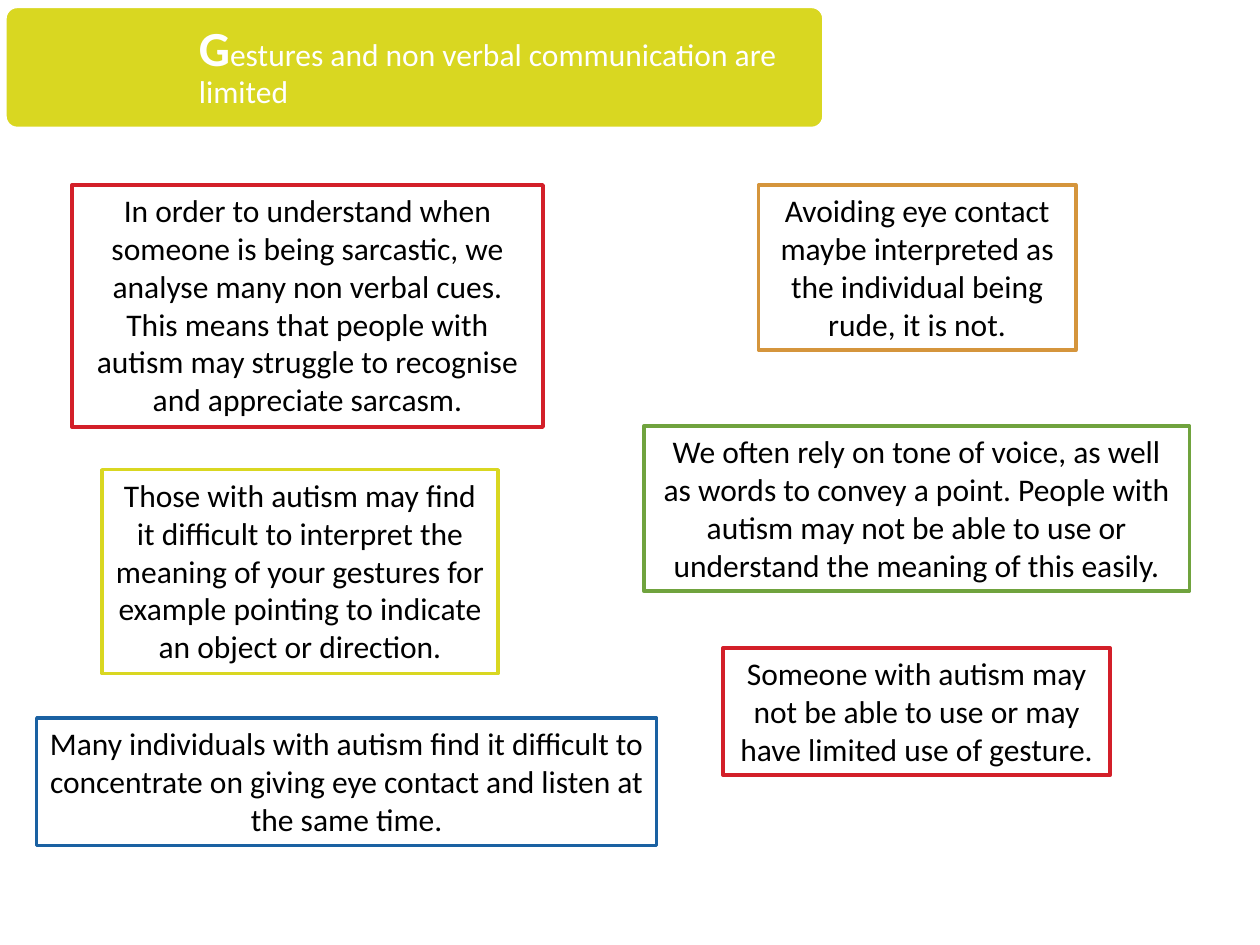
from pptx import Presentation
from pptx.dml.color import RGBColor
from pptx.enum.shapes import MSO_SHAPE
from pptx.enum.text import MSO_ANCHOR, MSO_AUTO_SIZE, PP_ALIGN
from pptx.util import Cm, Pt


def rgb(value):
    return RGBColor.from_string(value)


def add_run(p, text, size, color, bold=False):
    r = p.add_run()
    r.text = text
    r.font.name = "Calibri"
    r.font.size = Pt(size)
    r.font.bold = bold
    r.font.color.rgb = rgb(color)


prs = Presentation()
prs.slide_width, prs.slide_height = Cm(25.4), Cm(19.05)
s = prs.slides.add_slide(prs.slide_layouts[5])

# Outlined statements: left, top, width, height (cm), line colour, text
statements = [
    (12.98, 8.59, 11, 3.33, "70A33E",
     "We often rely on tone of voice, as well as words to convey a point. "
     "People with autism may not be able to use or understand the meaning of this easily."),
    (15.29, 3.73, 6.4, 3.33, "D5953C",
     "Avoiding eye contact maybe interpreted as the individual being rude, it is not."),
    (14.58, 13.06, 7.8, 2.57, "D31F29",
     "Someone with autism may not be able to use or may have limited use of gesture."),
    (1.45, 3.73, 9.5, 4.88, "D31F29",
     "In order to understand when someone is being sarcastic, we analyse many non verbal cues. "
     "This means that people with autism may struggle to recognise and appreciate sarcasm."),
    (2.06, 9.47, 7.98, 4.11, "D9D721",
     "Those with autism may find it difficult to interpret the meaning of your gestures "
     "for example pointing to indicate an object or direction."),
    (0.74, 14.48, 12.5, 2.57, "1A61A2",
     "Many individuals with autism find it difficult to concentrate on giving eye contact "
     "and listen at the same time."),
]
for left, top, width, height, color, text in statements:
    sp = s.shapes.add_shape(MSO_SHAPE.RECTANGLE, Cm(left), Cm(top), Cm(width), Cm(height))
    sp.shadow.inherit = False
    sp.fill.solid()
    sp.fill.fore_color.rgb = rgb("FFFFFF")
    sp.line.color.rgb = rgb(color)
    sp.line.width = Pt(2)
    tf = sp.text_frame
    tf.word_wrap = True
    tf.auto_size = MSO_AUTO_SIZE.SHAPE_TO_FIT_TEXT
    tf.vertical_anchor = MSO_ANCHOR.TOP
    p = tf.paragraphs[0]
    p.alignment = PP_ALIGN.CENTER
    add_run(p, text, 18, "000000")

# Title banner
banner = s.shapes.add_shape(MSO_SHAPE.ROUNDED_RECTANGLE, Cm(0.1), Cm(0.13), Cm(16.51), Cm(2.46))
banner.adjustments[0] = 0.1
banner.shadow.inherit = False
banner.fill.solid()
banner.fill.fore_color.rgb = rgb("D9D721")
banner.line.color.rgb = rgb("FFFFFF")
banner.line.width = Pt(2)

# Title, brought in front of the banner
title = s.shapes.title
title.left, title.top, title.width, title.height = Cm(3.71), Cm(0.2), Cm(13), Cm(2.31)
s.shapes.element.append(title.element)
tf = title.text_frame
tf.word_wrap = True
tf.auto_size = MSO_AUTO_SIZE.NONE
tf.vertical_anchor = MSO_ANCHOR.MIDDLE
tf.margin_left = tf.margin_right = tf.margin_top = tf.margin_bottom = Cm(0.3)
p = tf.paragraphs[0]
p.alignment = PP_ALIGN.LEFT
p.line_spacing = 0.9
add_run(p, "G", 28, "FFFFFF", bold=True)
add_run(p, "estures and non verbal communication are limited", 18, "FFFFFF")

prs.save("out.pptx")
